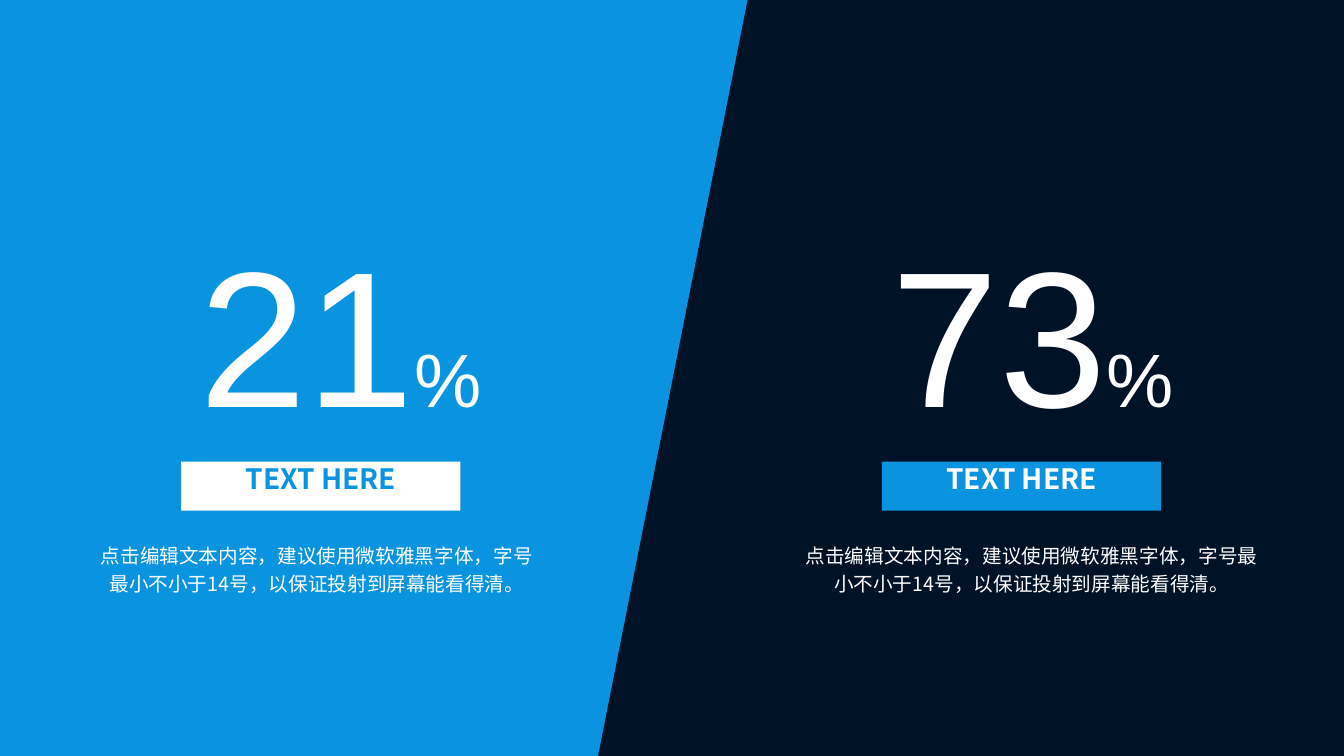
from dataclasses import dataclass

import pptx
import pptx.dml.color
import pptx.enum.shapes
import pptx.enum.text
import pptx.util

Pt = pptx.util.Pt
Shape = pptx.enum.shapes.MSO_SHAPE
Align = pptx.enum.text.PP_ALIGN
Anchor = pptx.enum.text.MSO_ANCHOR

COLORS = {"navy": "001225", "blue": "0A94E0", "white": "FFFFFF"}
CJK_FONT = "Noto Sans CJK SC"
ADVICE = "点击编辑文本内容，建议使用微软雅黑字体，字号最小不小于14号，以保证投射到屏幕能看得清。"
PAGE_WIDTH, PAGE_HEIGHT = 960, 540
PANEL_WIDTH = 534


@dataclass
class Statistic:
    number: str
    number_left: float
    number_width: float
    label_left: float
    label_fill: str
    label_color: str
    advice_left: float
    advice_width: float


STATISTICS = [
    Statistic("21", 135.4, 218.2, 129.4, "white", "blue", 59, 334.8),
    Statistic("73", 630, 223.9, 630, "blue", "white", 568.1, 337.7),
]


def color(name: str) -> pptx.dml.color.RGBColor:
    return pptx.dml.color.RGBColor.from_string(COLORS[name])


def add_block(page, kind, left: float, top: float, width: float, height: float, fill: str):
    """Add a flat shape without outline or shadow."""
    block = page.shapes.add_shape(kind, Pt(left), Pt(top), Pt(width), Pt(height))
    block.shadow.inherit = False
    block.fill.solid()
    block.fill.fore_color.rgb = color(fill)
    block.line.fill.background()
    return block


def add_text(para, text: str, *, size: float, font: str, fill: str = "white", bold: bool = False) -> None:
    """Append a formatted span, naming the font for Latin and East Asian text."""
    span = para.add_run()
    span.text = text
    span.font.size = Pt(size)
    span.font.name = font
    span.font.bold = bold
    span.font.color.rgb = color(fill)
    east_asian = span.font._element.makeelement(pptx.oxml.ns.qn("a:ea"), {"typeface": font})
    span.font._element.append(east_asian)


def add_statistic(page, item: Statistic) -> None:
    advice = page.shapes.add_textbox(Pt(item.advice_left), Pt(381.6), Pt(item.advice_width), Pt(48.2))
    advice.text_frame.word_wrap = True
    para = advice.text_frame.paragraphs[0]
    para.alignment = Align.CENTER
    para.line_spacing = 1.2
    add_text(para, ADVICE, size=14, font=CJK_FONT)

    label = add_block(page, Shape.RECTANGLE, item.label_left, 329.8, 199.5, 34.9, item.label_fill)
    label.text_frame.vertical_anchor = Anchor.TOP
    label.text_frame.margin_top = label.text_frame.margin_bottom = 0
    para = label.text_frame.paragraphs[0]
    para.alignment = Align.CENTER
    add_text(para, "TEXT HERE", size=20, font=CJK_FONT, fill=item.label_color, bold=True)

    number = page.shapes.add_textbox(Pt(item.number_left), Pt(144.7), Pt(item.number_width), Pt(174.2))
    number.text_frame.word_wrap = False
    number.text_frame.vertical_anchor = Anchor.BOTTOM
    number.text_frame.margin_bottom = 0
    para = number.text_frame.paragraphs[0]
    add_text(para, item.number, size=138, font="Arial")
    add_text(para, "%", size=54, font="Arial")


def main() -> None:
    deck = pptx.Presentation()
    deck.slide_width, deck.slide_height = Pt(PAGE_WIDTH), Pt(PAGE_HEIGHT)
    page = deck.slides.add_slide(deck.slide_layouts[6])
    add_block(page, Shape.RECTANGLE, 0, 0, PAGE_WIDTH, PAGE_HEIGHT, "navy")

    # The panel is turned a quarter, so its frame is offset by half the side difference.
    offset = (PAGE_HEIGHT - PANEL_WIDTH) / 2
    panel = add_block(page, Shape.FLOWCHART_MANUAL_INPUT, -offset, offset, PAGE_HEIGHT, PANEL_WIDTH, "blue")
    panel.rotation = 90
    panel._element.spPr.xfrm.set("flipH", "1")

    for item in STATISTICS:
        add_statistic(page, item)
    deck.save("out.pptx")


if __name__ == "__main__":
    main()
